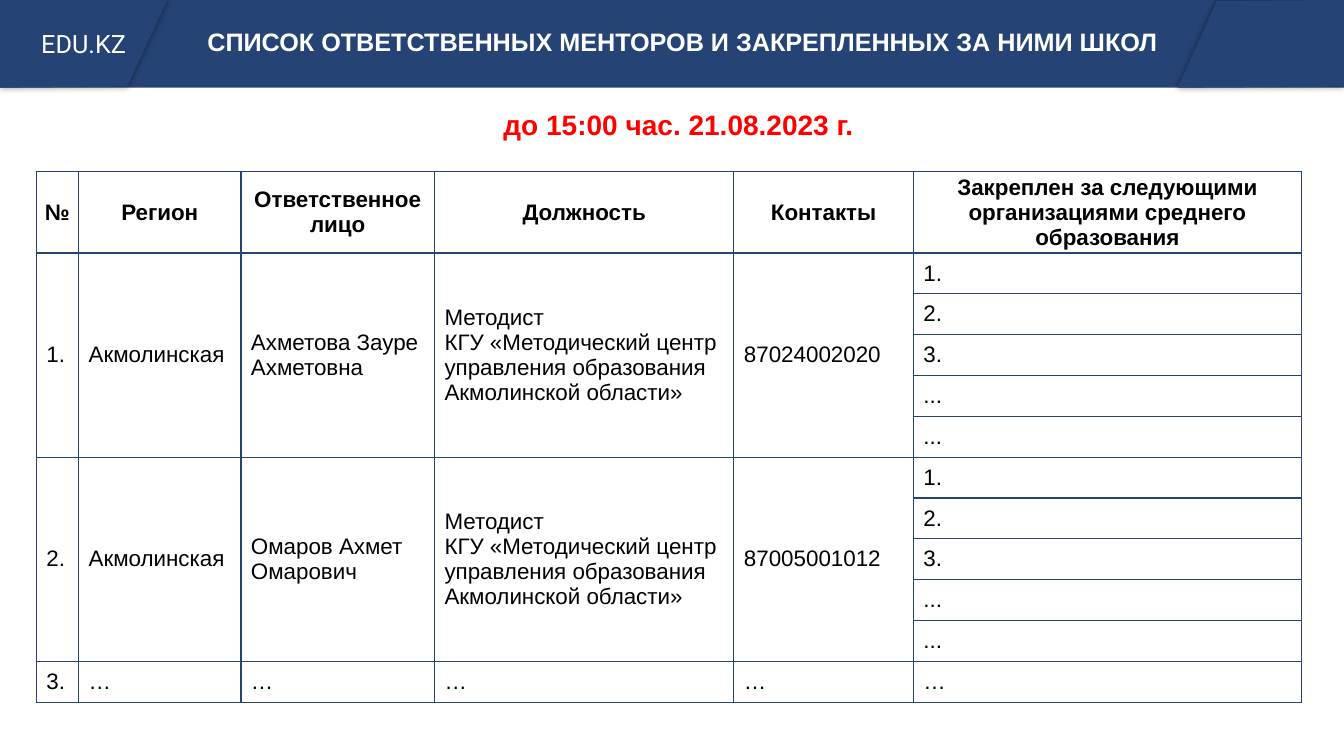
"""Builds the slide listing mentors and the schools assigned to them."""
from typing import NamedTuple

import lxml.etree
import pptx
import pptx.dml.color
import pptx.enum.shapes
import pptx.enum.text
import pptx.oxml
import pptx.oxml.ns
import pptx.util

Inches = pptx.util.Inches
RGB = pptx.dml.color.RGBColor
Shape = pptx.enum.shapes.MSO_SHAPE
Align = pptx.enum.text.PP_ALIGN
Anchor = pptx.enum.text.MSO_ANCHOR
qn = pptx.oxml.ns.qn

NAVY = RGB(0x25, 0x43, 0x75)
WHITE = RGB(0xFF, 0xFF, 0xFF)
BLACK = RGB(0, 0, 0)
RED = RGB(0xFF, 0, 0)

SPACE = pptx.oxml.ns.nsdecls("a")
SHADE = f"""<a:effectLst {SPACE}><a:outerShdw blurRad="63500" dist="0" dir="0">
<a:srgbClr val="000000"><a:alpha val="40000"/></a:srgbClr></a:outerShdw></a:effectLst>"""


class Flap(NamedTuple):
    points: list
    text: str


class Mentor(NamedTuple):
    region: str
    name: str
    post: str
    phone: str


FLAPS = [
    Flap([(0, 0), (0, 0.87), (1.26, 0.86), (1.66, 0)], "EDU.KZ"),
    Flap([(13.33, 0.86), (13.33, 0), (12.07, 0.01), (11.68, 0.87)], ""),
]
HEADS = ["№", "Регион", "Ответственное лицо", "Должность", "Контакты",
         "Закреплен за следующими организациями среднего образования"]
CENTRE = "КГУ «Методический центр управления образования Акмолинской области»"
MENTORS = [
    Mentor("Акмолинская", "Ахметова Зауре Ахметовна", f"Методист \v{CENTRE}", "87024002020"),
    Mentor("Акмолинская", "Омаров Ахмет Омарович", f"Методист\n{CENTRE}", "87005001012"),
]
SCHOOLS = ["1.", "2.", "3.", "...", "..."]
WIDTHS = [0.42, 1.61, 1.92, 2.97, 1.78, 3.85]
HEAD = 0.81
BODY = 4.46


def put(frame, text: str, *, size: int = 16, face: str = "Arial", color: RGB = BLACK,
        bold: bool = False, align: Align = Align.LEFT) -> None:
    for i, line in enumerate(text.split("\n")):
        para = frame.add_paragraph() if i else frame.paragraphs[0]
        para.text = line
        para.alignment = align
        for run in para.runs:
            run.font.size = pptx.util.Pt(size)
            run.font.name = face
            run.font.color.rgb = color
            run.font.bold = bold


def paint(shape, color: RGB) -> None:
    shape.shadow.inherit = False
    shape.fill.solid()
    shape.fill.fore_color.rgb = color
    shape.line.fill.background()


def draw_flap(slide, flap: Flap):
    first, *rest = [(round(x * 100), round(y * 100)) for x, y in flap.points]
    form = slide.shapes.build_freeform(*first, scale=Inches(0.01))
    form.add_line_segments(rest, close=True)
    shape = form.convert_to_shape()
    paint(shape, NAVY)
    props = shape.element.spPr
    props.replace(props.find(qn("a:effectLst")), pptx.oxml.parse_xml(SHADE))
    if flap.text:
        shape.text_frame.vertical_anchor = Anchor.MIDDLE
        put(shape.text_frame, flap.text, size=18, face="Roboto", color=WHITE, align=Align.CENTER)
    return shape


def frame_cell(cell) -> None:
    props = cell._tc.get_or_add_tcPr()
    for side in "LRTB":
        line = lxml.etree.SubElement(props, qn(f"a:ln{side}"), w="12700")
        fill = lxml.etree.SubElement(line, qn("a:solidFill"))
        lxml.etree.SubElement(fill, qn("a:srgbClr"), val=str(NAVY))
    cell.fill.background()
    cell.vertical_anchor = Anchor.MIDDLE


def draw_table(slide) -> None:
    step = len(SCHOOLS)
    count = step * len(MENTORS) + 1
    table = slide.shapes.add_table(count + 1, len(WIDTHS), Inches(0.36), Inches(1.7),
                                   Inches(sum(WIDTHS)), Inches(HEAD + BODY)).table
    table.first_row = table.horz_banding = False
    for col, width in zip(table.columns, WIDTHS):
        col.width = Inches(width)
    for i, row in enumerate(table.rows):
        row.height = Inches(BODY / count if i else HEAD)
        for cell in row.cells:
            frame_cell(cell)
    for i, text in enumerate(HEADS):
        cell = table.cell(0, i)
        cell.margin_left = cell.margin_right = cell.margin_top = Inches(0.01)
        cell.margin_bottom = 0
        put(cell.text_frame, text, bold=True, align=Align.CENTER)
    for n, mentor in enumerate(MENTORS):
        top = 1 + n * step
        for i, text in enumerate([f"{n + 1}.", *mentor]):
            cell = table.cell(top, i)
            cell.merge(table.cell(top + step - 1, i))
            put(cell.text_frame, text)
        for i, text in enumerate(SCHOOLS):
            put(table.cell(top + i, len(WIDTHS) - 1).text_frame, text)
    for i in range(len(WIDTHS)):
        put(table.cell(count, i).text_frame, "…" if i else f"{len(MENTORS) + 1}.")


def main() -> None:
    deck = pptx.Presentation()
    deck.slide_width, deck.slide_height = Inches(13.33), Inches(7.5)
    slide = deck.slides.add_slide(deck.slide_layouts.get_by_name("Title Only"))

    band = slide.shapes.add_shape(Shape.ROUNDED_RECTANGLE, 0, 0, deck.slide_width, Inches(0.87))
    band.adjustments[0] = 0
    paint(band, NAVY)
    last = [draw_flap(slide, flap) for flap in FLAPS][-1]

    title = slide.shapes.title
    last.element.addnext(title.element)
    title.left, title.top = Inches(1.71), Inches(0.21)
    title.width, title.height = Inches(10.12), Inches(0.4)
    title.text_frame.auto_size = pptx.enum.text.MSO_AUTO_SIZE.NONE
    title.text_frame.vertical_anchor = Anchor.TOP
    put(title.text_frame, "СПИСОК ОТВЕТСТВЕННЫХ МЕНТОРОВ И ЗАКРЕПЛЕННЫХ ЗА НИМИ ШКОЛ",
        size=18, color=WHITE, bold=True, align=Align.CENTER)

    draw_table(slide)

    date = slide.shapes.add_shape(Shape.RECTANGLE, Inches(4.67), Inches(1.02),
                                  Inches(4.12), Inches(0.44))
    paint(date, WHITE)
    date.text_frame.word_wrap = True
    date.text_frame.vertical_anchor = Anchor.TOP
    put(date.text_frame, "до 15:00 час. 21.08.2023 г.",
        size=20, color=RED, bold=True, align=Align.CENTER)

    deck.save("out.pptx")


if __name__ == "__main__":
    main()
